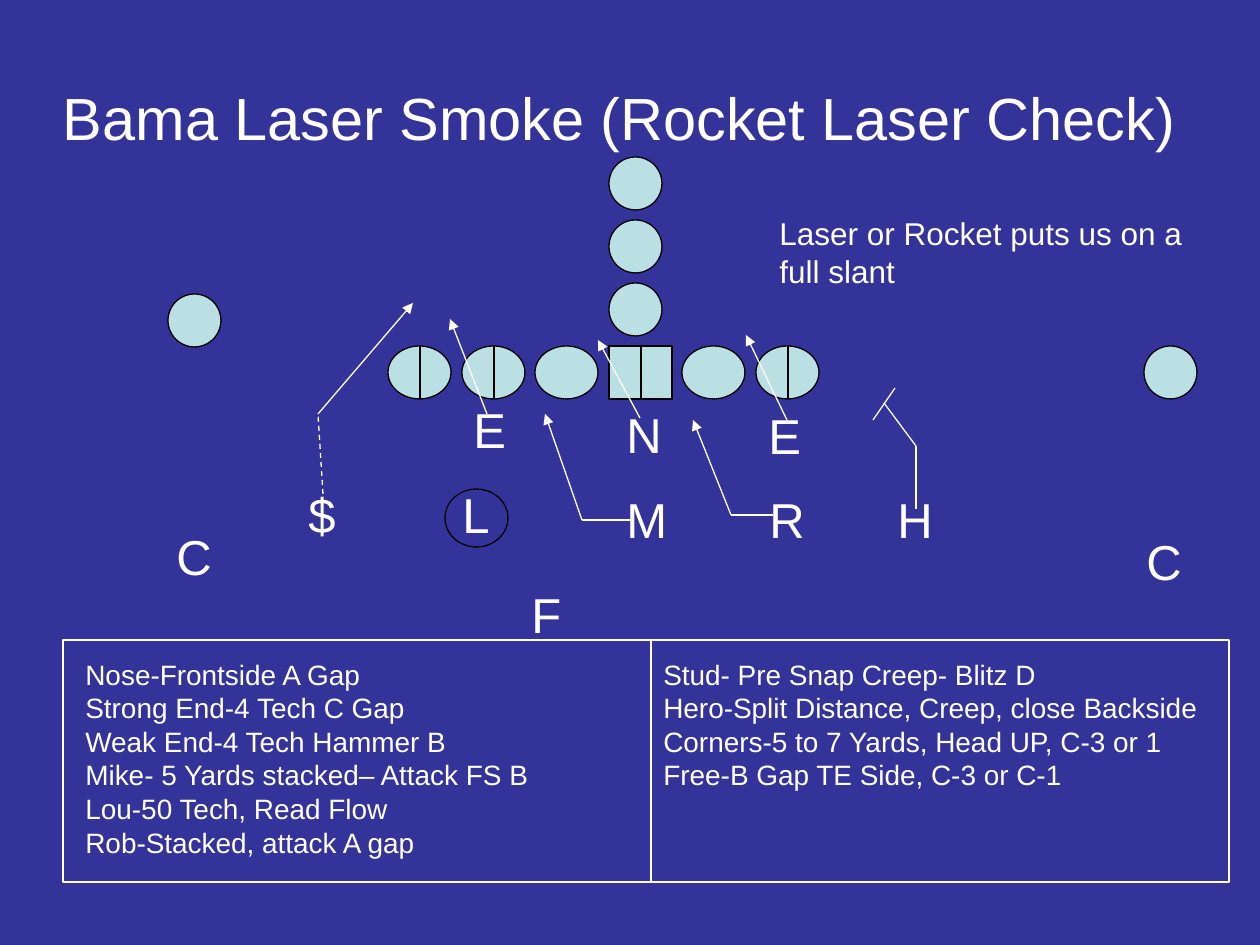
from itertools import pairwise
from lxml import etree
from pptx import Presentation
from pptx import util as u
from pptx.dml.color import RGBColor
from pptx.enum import dml, shapes, text
from pptx.oxml.ns import qn

THEME = {
    "font": "Arial", "back": "333399", "ink": "FFFFFF", "fill": "BBE0E3", "edge": "000000",
    "title": 34, "letter": 28, "note": 18, "duty": 16, "leading": 1.2, "line": 0.75,
}
SCALE = 914400 / 126

TITLE = "Bama Laser Smoke (Rocket Laser Check)"
NOTE = "Laser or Rocket puts us on a full slant"
DUTIES = [
    ["Nose-Frontside A Gap", "Strong End-4 Tech C Gap", "Weak End-4 Tech Hammer B",
     "Mike- 5 Yards stacked– Attack FS B", "Lou-50 Tech, Read Flow",
     "Rob-Stacked, attack A gap"],
    ["Stud- Pre Snap Creep- Blitz D", "Hero-Split Distance, Creep, close Backside",
     "Corners-5 to 7 Yards, Head UP, C-3 or 1", "Free-B Gap TE Side, C-3 or C-1"],
]
LINEMEN = [("OVAL", True), ("OVAL", True), ("OVAL", False),
           ("RECTANGLE", True), ("OVAL", False), ("OVAL", True)]
RECEIVERS = [(168, 294), (1144, 346)]
BACKS = [(609, 157 + 63 * i) for i in range(3)]
DEFENDERS = [
    ("E", 461, 393, 63), ("N", 614, 398, 63), ("E", 756, 399, 63),
    ("L", 450, 478, 53), ("M", 614, 483, 73), ("R", 757, 483, 73),
    ("C", 164, 520, 73), ("$", 296, 478, 53), ("H", 885, 483, 63),
    ("C", 1134, 525, 53), ("F", 519, 578, 53),
]
ARROWS = [
    [(640, 418), (598, 340)],
    [(318, 414), (413, 303)],
    [(487, 414), (450, 319)],
    [(787, 420), (746, 335)],
    [(630, 520), (582, 520), (545, 414)],
    [(773, 515), (731, 515), (693, 420)],
]
PATHS = [[(916, 509), (916, 446), (884, 403)], [(873, 420), (895, 388)]]
CREEP = [(323, 494), (318, 414)]
PANEL = (63, 640, 1166, 242)
DIVIDER = 651

prs = Presentation()
prs.slide_width, prs.slide_height = u.Inches(10), u.Inches(7.5)
s = prs.slides.add_slide(prs.slide_layouts[5])


def emu(*lengths):
    return [u.Emu(round(n * SCALE)) for n in lengths]


def color(name):
    return RGBColor.from_string(THEME[name])


def write(lines, box, size="letter", sp=None, align=text.PP_ALIGN.LEFT,
          anchor=text.MSO_ANCHOR.TOP):
    sp = sp or s.shapes.add_textbox(0, 0, 0, 0)
    sp.left, sp.top, sp.width, sp.height = emu(*box)
    tf = sp.text_frame
    tf.text = "\n".join(lines)
    tf.word_wrap = True
    tf.auto_size = text.MSO_AUTO_SIZE.NONE
    tf.vertical_anchor = anchor
    for p in tf.paragraphs:
        p.alignment = align
        p.line_spacing = u.Pt(THEME[size] * THEME["leading"])
        for r in p.runs:
            r.font.name = THEME["font"]
            r.font.size = u.Pt(THEME[size])
            r.font.color.rgb = color("ink")


def draw(kind, box, fill="fill", line="edge"):
    sp = s.shapes.add_shape(shapes.MSO_SHAPE[kind], *emu(*box))
    sp.shadow.inherit = False
    if fill:
        sp.fill.solid()
        sp.fill.fore_color.rgb = color(fill)
    else:
        sp.fill.background()
    sp.line.color.rgb = color(line)
    sp.line.width = u.Pt(THEME["line"])


def route(points, line="ink", arrow=False, dash=False):
    for start, end in pairwise(points):
        c = s.shapes.add_connector(shapes.MSO_CONNECTOR.STRAIGHT, *emu(*start, *end))
        c.line.color.rgb = color(line)
        c.line.width = u.Pt(THEME["line"])
        if dash:
            c.line.dash_style = dml.MSO_LINE.DASH
        if arrow and end == points[-1]:
            etree.SubElement(c.line._get_or_add_ln(), qn("a:tailEnd"), type="triangle")
        etree.SubElement(c._element.spPr, qn("a:effectLst"))


s.background.fill.solid()
s.background.fill.fore_color.rgb = color("back")
write([TITLE], (42, 38, 1155, 158), size="title", sp=s.shapes.title,
      align=text.PP_ALIGN.CENTER, anchor=text.MSO_ANCHOR.MIDDLE)

for i, (kind, split) in enumerate(LINEMEN):
    x = 388 + (147 * i + 1) // 2
    draw(kind, (x, 346, 63, 53))
    if split:
        route([(x + 32, 346), (x + 32, 399)], line="edge")
for x, y in RECEIVERS + BACKS:
    draw("OVAL", (x, y, 53, 53))

draw("OVAL", (445, 489, 63, 58), fill=None)
for letter, x, y, w in DEFENDERS:
    write([letter], (x, y, w, 72))
for points in ARROWS:
    route(points, arrow=True)
for points in PATHS:
    route(points)
route(CREEP, dash=True)
write([NOTE], (767, 208, 433, 88), size="note")

draw("RECTANGLE", PANEL, fill=None, line="ink")
route([(DIVIDER, PANEL[1] + PANEL[3]), (DIVIDER, PANEL[1])])
for lines, x in zip(DUTIES, (73, DIVIDER)):
    write(lines, (x, 651, 577, 34 * len(lines) + 12), size="duty")

prs.save("out.pptx")
